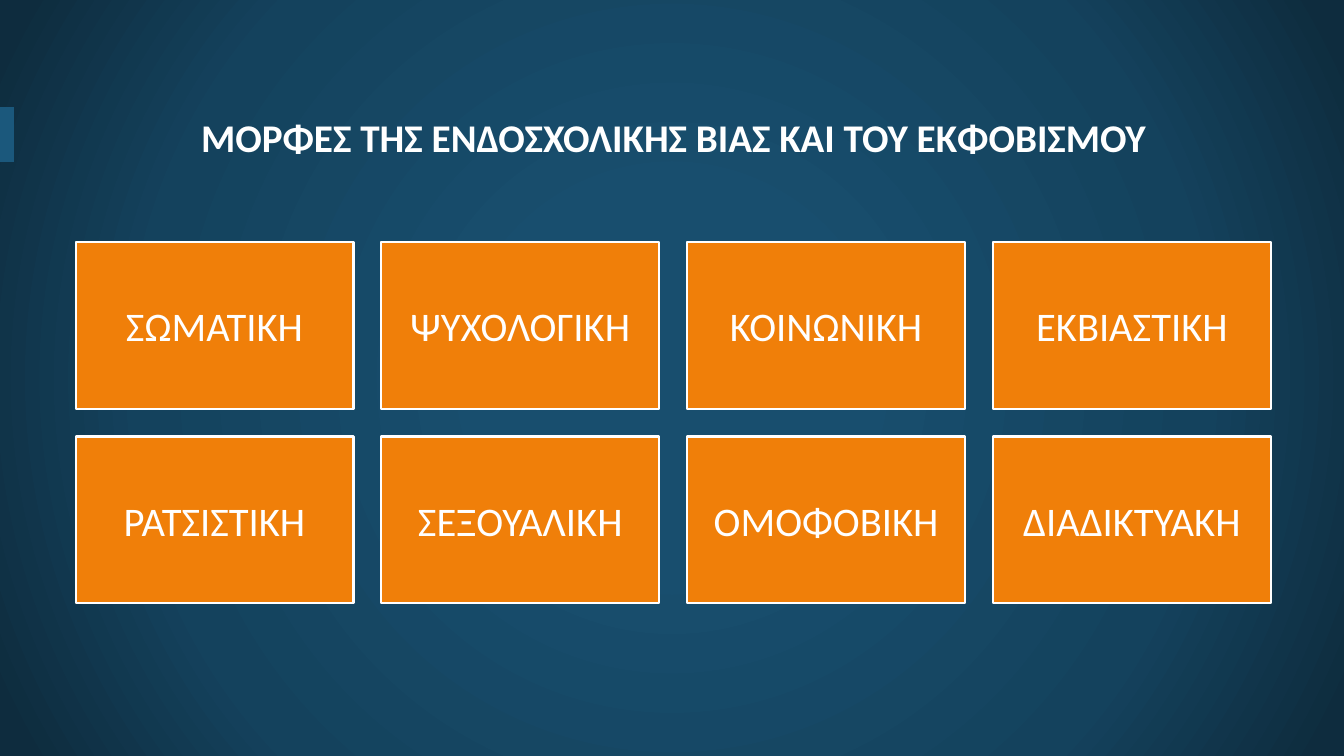
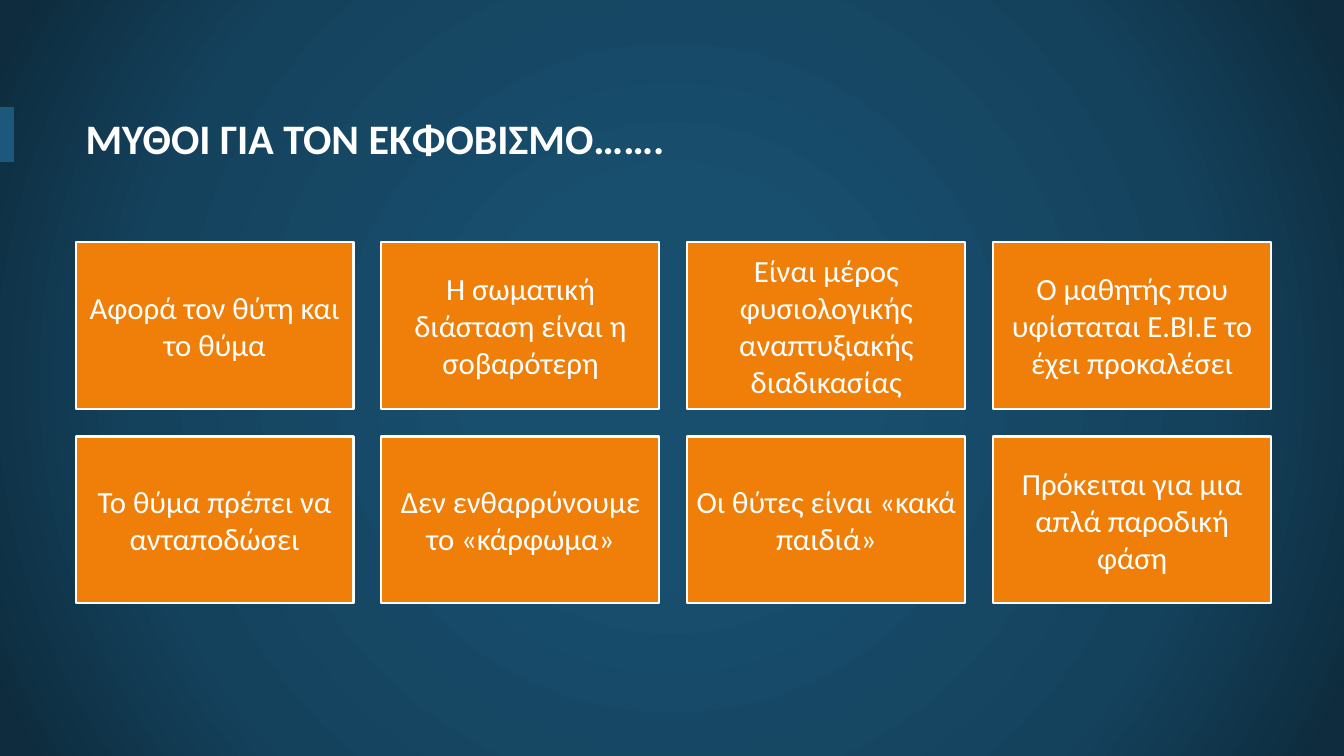
from lxml import etree
from pptx import Presentation
from pptx.dml.color import RGBColor
from pptx.enum import shapes, text
from pptx.oxml import ns
from pptx.util import Pt

FONT = "Calibri"
WHITE, ORANGE, BLUE = "FFFFFF", "F07F09", "1B587C"
BACKDROP = [(0, "184E6E"), (23, "184E6E"), (69, "14425D"), (97, "0E2C3E")]

# Boxes: left, top, width, height in points
TITLE_BOX = (54, 48.5, 854, 99)
GRID_BOX = (54, 172.8, 854, 258)
COLUMNS = 4
GAP_RATIO = 0.1      # gap between tiles, as a share of tile width
TILE_RATIO = 0.6     # tile height, as a share of tile width

FORMS = ["ΣΩΜΑΤΙΚΗ", "ΨΥΧΟΛΟΓΙΚΗ", "ΚΟΙΝΩΝΙΚΗ", "ΕΚΒΙΑΣΤΙΚΗ",
         "ΡΑΤΣΙΣΤΙΚΗ", "ΣΕΞΟΥΑΛΙΚΗ", "ΟΜΟΦΟΒΙΚΗ", "ΔΙΑΔΙΚΤΥΑΚΗ"]
MYTHS = ["Αφορά τον θύτη και το θύμα",
         "Η σωματική διάσταση είναι η σοβαρότερη",
         "Είναι μέρος φυσιολογικής αναπτυξιακής διαδικασίας",
         "Ο μαθητής που υφίσταται Ε.ΒΙ.Ε το έχει προκαλέσει",
         "Το θύμα πρέπει να ανταποδώσει",
         "Δεν ενθαρρύνουμε το «κάρφωμα»",
         "Οι θύτες είναι «κακά παιδιά»",
         "Πρόκειται για μια απλά παροδική φάση"]


def rgb(value):
    return RGBColor.from_string(value)


def set_backdrop(master):
    """Radial gradient shared by every slide."""
    fill = master.background.fill
    fill.gradient()
    grad = master.element.find(".//" + ns.qn("p:bgPr")).find(ns.qn("a:gradFill"))
    for child in list(grad):
        grad.remove(child)
    stops = etree.SubElement(grad, ns.qn("a:gsLst"))
    for position, color in BACKDROP:
        stop = etree.SubElement(stops, ns.qn("a:gs"), pos=str(position * 1000))
        etree.SubElement(stop, ns.qn("a:srgbClr"), val=color)
    circle = etree.SubElement(grad, ns.qn("a:path"), path="circle")
    etree.SubElement(circle, ns.qn("a:fillToRect"),
                     {side: "50000" for side in "ltrb"})


def write(shape, words, size, align, inset, bold=False):
    tf = shape.text_frame
    tf.word_wrap = True
    tf.vertical_anchor = text.MSO_ANCHOR.MIDDLE
    tf.margin_left = tf.margin_right = Pt(inset)
    tf.margin_top = tf.margin_bottom = Pt(inset)
    p = tf.paragraphs[0]
    p.text = words
    p.alignment = align
    p.font.name, p.font.size, p.font.bold = FONT, Pt(size), bold
    p.font.color.rgb = rgb(WHITE)


def add_title(s, box, words, size, align):
    # Edge marker
    marker = s.shapes.add_connector(shapes.MSO_CONNECTOR.STRAIGHT,
                                    Pt(5), Pt(116), Pt(5), Pt(76.2))
    marker.line.color.rgb = rgb(BLUE)
    marker.line.width = Pt(10)
    etree.SubElement(marker._element.spPr, ns.qn("a:effectLst"))
    # Heading
    heading = s.shapes.add_textbox(*map(Pt, box))
    write(heading, words, size, align, 7.2, bold=True)


def add_tiles(s, box, labels, size, inset):
    left, top, width, _ = box
    tile_w = width / (COLUMNS + GAP_RATIO * (COLUMNS - 1))
    tile_h = tile_w * TILE_RATIO
    gap = tile_w * GAP_RATIO
    for i, label in enumerate(labels):
        row, col = divmod(i, COLUMNS)
        tile = s.shapes.add_shape(
            shapes.MSO_SHAPE.RECTANGLE,
            Pt(left + col * (tile_w + gap)), Pt(top + row * (tile_h + gap)),
            Pt(tile_w), Pt(tile_h))
        tile.shadow.inherit = False
        tile.fill.solid()
        tile.fill.fore_color.rgb = rgb(ORANGE)
        tile.line.color.rgb = rgb(WHITE)
        tile.line.width = Pt(1.5)
        write(tile, label, size, text.PP_ALIGN.CENTER, inset)


def add_tile_slide(prs, title, title_size, align, labels, size, inset):
    s = prs.slides.add_slide(prs.slide_layouts[6])
    add_title(s, TITLE_BOX, title, title_size, align)
    add_tiles(s, GRID_BOX, labels, size, inset)


def main():
    prs = Presentation()
    prs.slide_width, prs.slide_height = Pt(960), Pt(540)
    set_backdrop(prs.slide_master)
    add_tile_slide(prs, "ΜΟΡΦΕΣ ΤΗΣ ΕΝΔΟΣΧΟΛΙΚΗΣ ΒΙΑΣ ΚΑΙ ΤΟΥ ΕΚΦΟΒΙΣΜΟΥ", 28,
                   text.PP_ALIGN.CENTER, FORMS, 29, 8.7)
    add_tile_slide(prs, "ΜΥΘΟΙ ΓΙΑ ΤΟΝ ΕΚΦΟΒΙΣΜΟ…….", 30,
                   text.PP_ALIGN.LEFT, MYTHS, 22, 6.6)
    prs.save("out.pptx")


if __name__ == "__main__":
    main()
